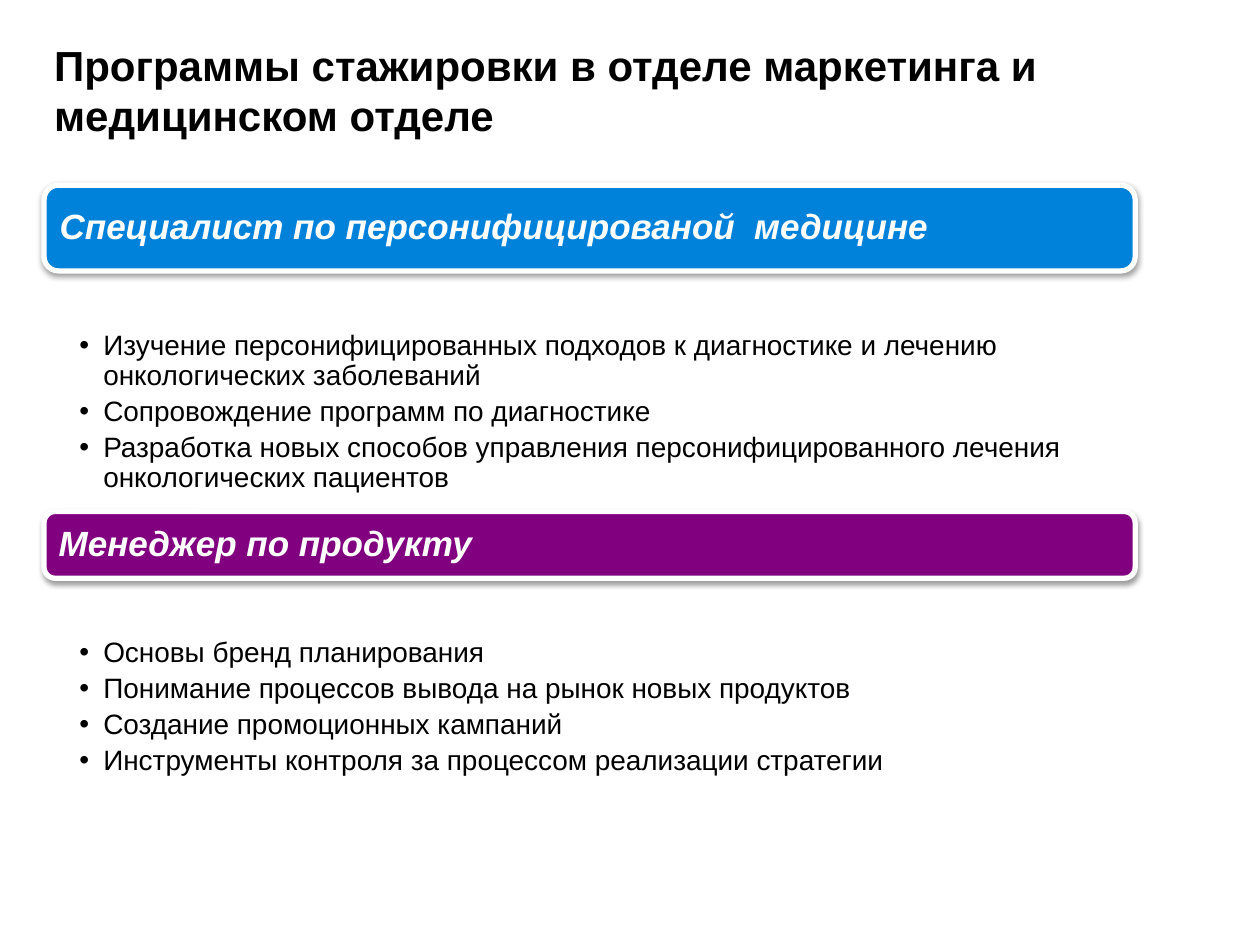
from dataclasses import dataclass

from lxml.etree import SubElement as Sub
from pptx import Presentation
from pptx.dml.color import RGBColor as Rgb
from pptx.enum.shapes import MSO_SHAPE as Shape
from pptx.enum.text import MSO_ANCHOR as Anchor, MSO_AUTO_SIZE as Fit, PP_ALIGN as Align
from pptx.oxml.ns import qn
from pptx.util import Inches, Pt


@dataclass(frozen=True)
class Theme:
    font: str = "Arial"
    ink: str = "000000"
    white: str = "FFFFFF"
    blue: str = "0082DA"
    plum: str = "800080"
    title: int = 24
    head: int = 20
    body: int = 16


@dataclass(frozen=True)
class Part:
    head: str
    fill: str
    top: float
    high: float
    deep: float  # height of the list
    items: tuple[str, ...]


THEME = Theme()
LEFT, WIDE = 0.35, 8.66
GAP = 0.46  # from a bar to its list
HANG = 0.19

PARTS = (
    Part("Специалист по персонифицированой  медицине", THEME.blue, 1.47, 0.68, 1.41, (
        "Изучение персонифицированных подходов к диагностике и лечению онкологических заболеваний",
        "Сопровождение программ по диагностике",
        "Разработка новых способов управления персонифицированного лечения онкологических пациентов",
    )),
    Part("Менеджер по продукту", THEME.plum, 4.06, 0.53, 1.23, (
        "Основы бренд планирования",
        "Понимание процессов\u00a0вывода на рынок\u00a0новых продуктов",
        "Создание промоционных кампаний",
        "Инструменты контроля за процессом реализации стратегии",
    )),
)


def set_frame(frame, anchor, left: float, top: float, right: float, bottom: float) -> None:
    frame.word_wrap = True
    frame.auto_size = Fit.NONE
    frame.vertical_anchor = anchor
    frame.margin_left, frame.margin_top = Inches(left), Inches(top)
    frame.margin_right, frame.margin_bottom = Inches(right), Inches(bottom)


def add_run(para, text: str, size: int, color: str, bold=False, slant=False) -> None:
    run = para.add_run()
    run.text = text
    font = run.font
    font.name, font.size = THEME.font, Pt(size)
    font.bold, font.italic = bold, slant
    font.color.rgb = Rgb.from_string(color)


def add_shadow(shape) -> None:
    effect = Sub(shape.element.spPr, qn("a:effectLst"))
    outer = Sub(effect, qn("a:outerShdw"), blurRad=str(Pt(3.1)), dist=str(Pt(1.6)),
                dir="5400000", rotWithShape="0")
    color = Sub(outer, qn("a:srgbClr"), val=THEME.ink)
    Sub(color, qn("a:alpha"), val="38000")


def add_bullet(para) -> None:
    props = para._p.get_or_add_pPr()
    props.set("marL", str(Inches(HANG)))
    props.set("indent", str(-Inches(HANG)))
    Sub(props, qn("a:buFont"), typeface=THEME.font)
    Sub(props, qn("a:buChar"), char="•")


def add_title(slide, text: str) -> None:
    title = slide.shapes.title
    title.left, title.top = Inches(0.43), Inches(0.31)
    title.width, title.height = Inches(8.35), Inches(0.63)
    set_frame(title.text_frame, Anchor.TOP, 0, 0, 0, 0)
    para = title.text_frame.paragraphs[0]
    para.alignment = Align.LEFT
    add_run(para, text, THEME.title, THEME.ink, bold=True)


def add_bar(slide, part: Part) -> None:
    bar = slide.shapes.add_shape(Shape.ROUNDED_RECTANGLE, Inches(LEFT), Inches(part.top),
                                 Inches(WIDE), Inches(part.high))
    bar.fill.solid()
    bar.fill.fore_color.rgb = Rgb.from_string(part.fill)
    bar.line.color.rgb = Rgb.from_string(THEME.white)
    bar.line.width = Pt(3)
    add_shadow(bar)
    set_frame(bar.text_frame, Anchor.MIDDLE, 0.09, 0.08, 0.08, 0.08)
    para = bar.text_frame.paragraphs[0]
    para.alignment = Align.LEFT
    para.line_spacing = 0.9
    add_run(para, part.head, THEME.head, THEME.white, bold=True, slant=True)


def add_list(slide, part: Part) -> None:
    box = slide.shapes.add_textbox(Inches(LEFT), Inches(part.top + part.high + GAP),
                                   Inches(WIDE), Inches(part.deep))
    frame = box.text_frame
    set_frame(frame, Anchor.TOP, 0.28, 0.02, 0.12, 0.02)
    for i, item in enumerate(part.items):
        para = frame.add_paragraph() if i else frame.paragraphs[0]
        para.level = 1
        add_bullet(para)
        para.line_spacing = 0.9
        para.space_after = Pt(3.2)
        add_run(para, item, THEME.body, THEME.ink)


def main() -> None:
    deck = Presentation()
    deck.slide_width, deck.slide_height = Inches(10), Inches(7.5)
    slide = deck.slides.add_slide(deck.slide_layouts[5])
    add_title(slide, "Программы стажировки в отделе маркетинга и медицинском отделе")
    # Each part is a coloured bar with a list below it
    for part in PARTS:
        add_bar(slide, part)
        add_list(slide, part)
    deck.save("out.pptx")


if __name__ == "__main__":
    main()
